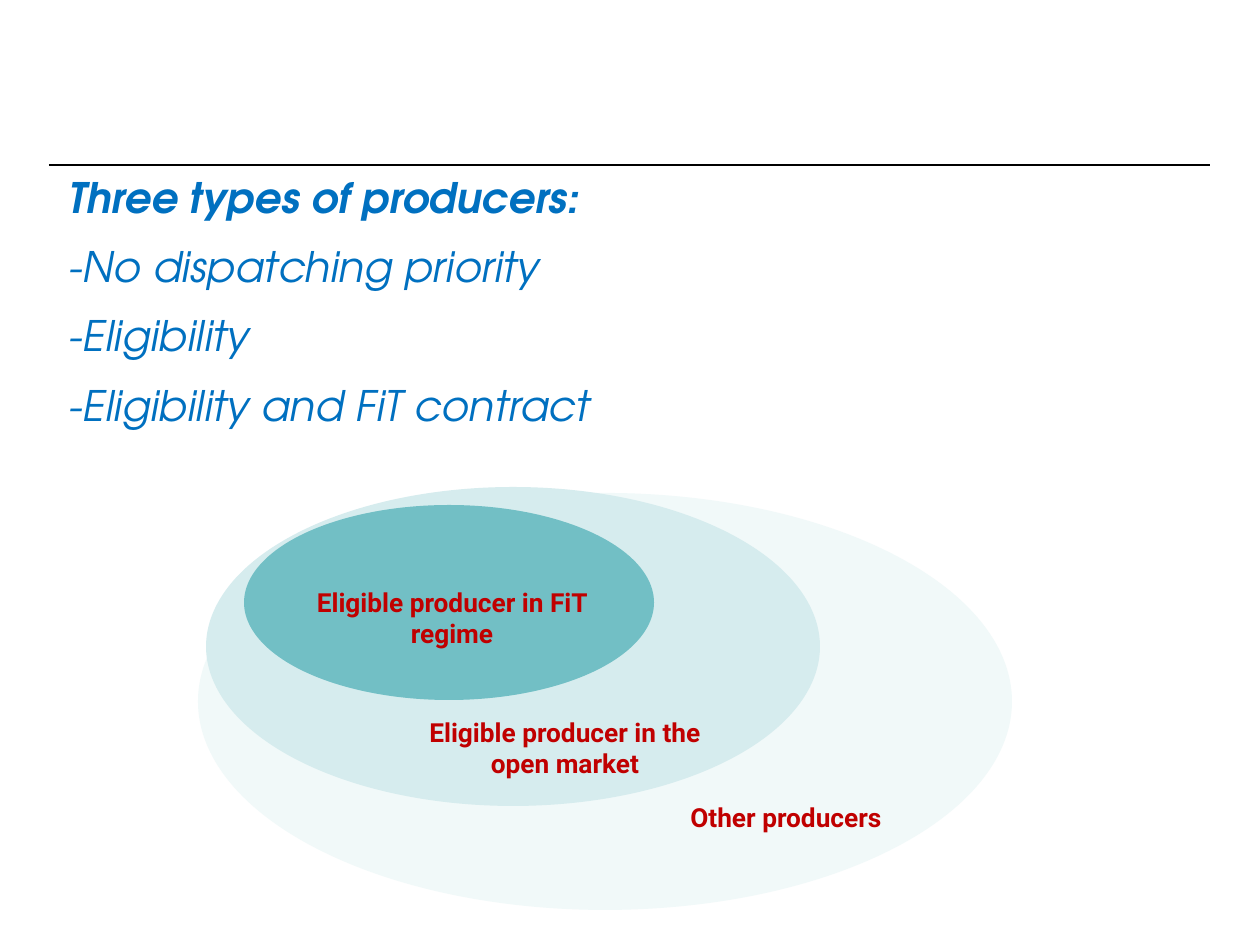
from lxml.etree import SubElement
from pptx import Presentation
from pptx.dml.color import RGBColor
from pptx.enum.shapes import MSO_CONNECTOR, MSO_SHAPE
from pptx.enum.text import MSO_ANCHOR, PP_ALIGN
from pptx.oxml.ns import qn
from pptx.util import Emu, Pt

PX = 914400 // 126

BLACK = RGBColor(0x00, 0x00, 0x00)
BLUE = RGBColor(0x00, 0x70, 0xC0)
RED = RGBColor(0xC0, 0x00, 0x00)
PALE_TEAL = RGBColor(0xF1, 0xF9, 0xF9)
LIGHT_TEAL = RGBColor(0xD6, 0xEC, 0xEE)
TEAL = RGBColor(0x72, 0xBF, 0xC5)

HEADING = "Three types of producers:"
PRODUCER_TYPES = ["-No dispatching priority", "-Eligibility", "-Eligibility and FiT contract"]

# Outermost group first: left, top, width, height, fill
GROUPS = [
    (198, 493, 814, 417, PALE_TEAL),
    (206, 487, 614, 319, LIGHT_TEAL),
    (244, 505, 410, 195, TEAL),
]
# Text, left, top, width
LABELS = [
    ("Eligible producer in FiT regime", 298, 594, 308),
    ("Eligible producer in the open market", 411, 724, 308),
    ("Other producers", 654, 794, 264),
]
LABEL_HEIGHT = 47


def px(*lengths):
    return [Emu(length * PX) for length in lengths]


def add_rule(slide, left, right, y):
    rule = slide.shapes.add_connector(MSO_CONNECTOR.STRAIGHT, *px(left, y, right, y))
    rule.line.color.rgb = BLACK
    rule.line.width = Pt(0.75)
    SubElement(rule._element.spPr, qn("a:effectLst"))


def add_text_frame(slide, left, top, width, height):
    frame = slide.shapes.add_textbox(*px(left, top, width, height)).text_frame
    frame.word_wrap = True
    return frame


def style(paragraph, name, size, color, bold, italic=False):
    font = paragraph.font
    font.name = name
    font.size = Pt(size)
    font.color.rgb = color
    font.bold = bold
    font.italic = italic


def add_producer_list(slide):
    frame = add_text_frame(slide, 44, 165, 1150, 745)
    frame.margin_left = px(25)[0]
    for i, text in enumerate([HEADING, *PRODUCER_TYPES]):
        paragraph = frame.add_paragraph() if i else frame.paragraphs[0]
        paragraph.text = text
        if i:
            paragraph.space_before = Pt(4.8)
        paragraph.space_after = Pt(6)
        style(paragraph, "TeX Gyre Adventor", 24, BLUE, bold=i == 0, italic=True)


def add_group(slide, left, top, width, height, fill):
    ellipse = slide.shapes.add_shape(MSO_SHAPE.OVAL, *px(left, top, width, height))
    ellipse.shadow.inherit = False
    ellipse.fill.solid()
    ellipse.fill.fore_color.rgb = fill
    ellipse.line.fill.background()


def add_label(slide, text, left, top, width):
    frame = add_text_frame(slide, left, top, width, LABEL_HEIGHT)
    frame.vertical_anchor = MSO_ANCHOR.MIDDLE
    paragraph = frame.paragraphs[0]
    paragraph.text = text
    paragraph.alignment = PP_ALIGN.CENTER
    style(paragraph, "Roboto", 15, RED, bold=True)


def main():
    deck = Presentation()
    deck.slide_width, deck.slide_height = px(1260, 945)
    slide = deck.slides.add_slide(deck.slide_layouts[6])
    add_rule(slide, 49, 1210, 165)
    add_producer_list(slide)
    for group in GROUPS:
        add_group(slide, *group)
    for label in LABELS:
        add_label(slide, *label)
    deck.save("out.pptx")


if __name__ == "__main__":
    main()
